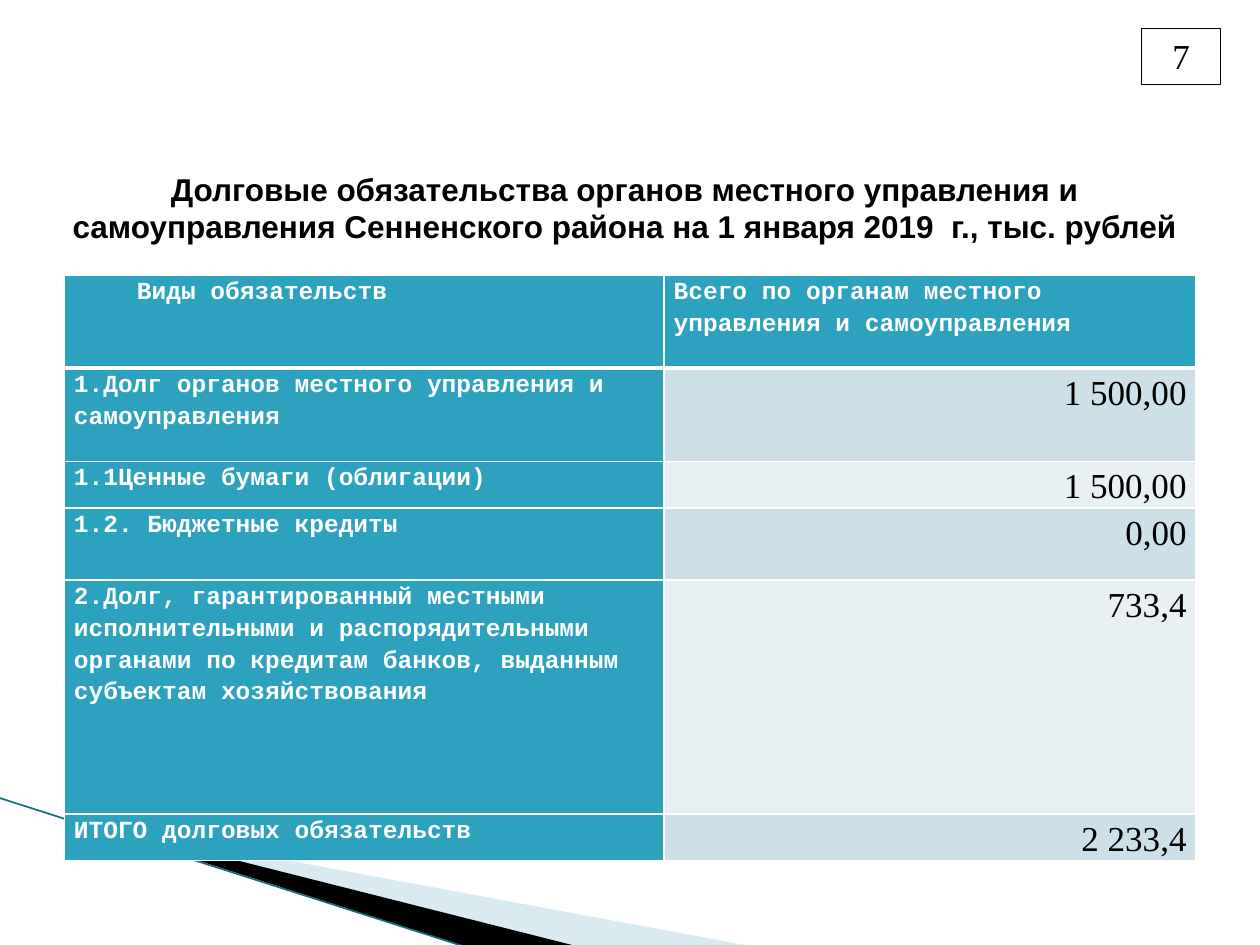
from lxml import etree
from pptx import Presentation
from pptx import util as u
from pptx.dml.color import RGBColor
from pptx.enum import shapes, text
from pptx.oxml import ns

Cm, Pt = u.Cm, u.Pt

COLORS = {
    "white": "FFFFFF",
    "black": "000000",
    "teal": "2DA2BF",
    "band_dark": "CDE0E8",
    "band_light": "E8F0F4",
    "wedge": "A0CBDC",
    "edge": "1C6B7F",
}
COLUMNS = (12.09, 10.72)
# Row height in cm, label, value
ROWS = (
    (1.88, "Виды обязательств",
     "Всего по органам местного управления и самоуправления"),
    (1.88, "1.Долг органов местного управления и самоуправления", "1 500,00"),
    (0.94, "1.1Ценные бумаги (облигации)", "1 500,00"),
    (1.45, "1.2. Бюджетные кредиты", "0,00"),
    (4.72, "2.Долг, гарантированный местными исполнительными и "
           "распорядительными органами по кредитам банков, выданным "
           "субъектам хозяйствования", "733,4"),
    (0.94, "ИТОГО долговых обязательств", "2 233,4"),
)


def rgb(name):
    return RGBColor.from_string(COLORS[name])


def fill_solid(fill, color):
    fill.solid()
    fill.fore_color.rgb = rgb(color)


def add_span(para, wording, font, size, color, bold=False):
    span = para.add_run()
    span.text = wording
    span.font.name = font
    span.font.size = Pt(size)
    span.font.bold = bold
    span.font.color.rgb = rgb(color)


def add_wedge(page, points, color, alpha=None):
    corners = [(Cm(x), Cm(y)) for x, y in points]
    builder = page.shapes.build_freeform(*corners[0])
    builder.add_line_segments(corners[1:], close=True)
    wedge = builder.convert_to_shape()
    wedge.shadow.inherit = False
    wedge.line.fill.background()
    fill_solid(wedge.fill, color)
    if alpha:
        tint = wedge._element.spPr.find(".//" + ns.qn("a:srgbClr"))
        etree.SubElement(tint, ns.qn("a:alpha"), val=str(alpha * 1000))


def add_corner_decoration(page, left, top):
    """Draw the wedges and the thin edge line, measured from their shared tip."""
    def shifted(points):
        return [(left + x, top + y) for x, y in points]

    add_wedge(page, shifted([(0.05, 0.05), (13.77, 2.59), (10.23, 2.59),
                             (0.05, 0.02)]), "wedge", 40)
    add_wedge(page, shifted([(0, 0), (10.26, 2.59), (8.1, 2.62),
                             (0.03, 0.03)]), "black")
    (x1, y1), (x2, y2) = shifted([(-1.38, -0.4), (8.07, 2.62)])
    edge = page.shapes.add_connector(shapes.MSO_CONNECTOR.STRAIGHT,
                                     Cm(x1), Cm(y1), Cm(x2), Cm(y2))
    edge.line.color.rgb = rgb("edge")
    edge.line.width = Pt(0.95)
    etree.SubElement(edge._element.spPr, ns.qn("a:effectLst"))


def set_borders(cell, widths):
    """Give the cell white borders; widths maps the sides L, R, T, B to points."""
    properties = cell._tc.get_or_add_tcPr()
    for side, width in widths.items():
        line = etree.SubElement(properties, ns.qn("a:ln" + side),
                                w=str(Pt(width)))
        solid = etree.SubElement(line, ns.qn("a:solidFill"))
        etree.SubElement(solid, ns.qn("a:srgbClr"), val=COLORS["white"])


def fill_cell(cell, wording, row, column):
    set_borders(cell, {"L": 1, "R": 1, "T": 3 if row == 1 else 1,
                       "B": 3 if row == 0 else 1})
    cell.margin_left = cell.margin_right = Cm(0.19)
    cell.margin_top = cell.margin_bottom = 0
    para = cell.text_frame.paragraphs[0]
    para.line_spacing = 1.15
    if row == 0 or column == 0:
        fill_solid(cell.fill, "teal")
        add_span(para, wording, "Courier New", 14, "white", True)
    else:
        fill_solid(cell.fill, "band_dark" if row % 2 else "band_light")
        para.alignment = text.PP_ALIGN.RIGHT
        add_span(para, wording, "Times New Roman", 20, "black")


def add_debt_table(page, left, top):
    heights = [row[0] for row in ROWS]
    table = page.shapes.add_table(
        len(ROWS), len(COLUMNS), Cm(left), Cm(top),
        Cm(sum(COLUMNS)), Cm(sum(heights))).table
    table.horz_banding = False
    for column, width in zip(table.columns, COLUMNS):
        column.width = Cm(width)
    for i, (height, *wordings) in enumerate(ROWS):
        table.rows[i].height = Cm(height)
        for j, wording in enumerate(wordings):
            fill_cell(table.cell(i, j), wording, i, j)
    heading = table.cell(0, 0).text_frame.paragraphs[0]
    heading._p.get_or_add_pPr().set("indent", str(Cm(1.27)))


def place_title(page, left, top, width, height):
    title = page.shapes.title
    title.left, title.top = Cm(left), Cm(top)
    title.width, title.height = Cm(width), Cm(height)
    frame = title.text_frame
    frame.word_wrap = True
    frame.auto_size = text.MSO_AUTO_SIZE.NONE
    frame.vertical_anchor = text.MSO_ANCHOR.MIDDLE
    para = frame.paragraphs[0]
    para.alignment = text.PP_ALIGN.CENTER
    add_span(para, "Долговые обязательства органов местного управления и "
                   "самоуправления Сенненского района на 1 января 2019  г., "
                   "тыс. рублей", "Arial", 18, "black", True)


def add_page_number(page, left, top, width, height):
    box = page.shapes.add_shape(shapes.MSO_SHAPE.RECTANGLE, Cm(left), Cm(top),
                                Cm(width), Cm(height))
    box.shadow.inherit = False
    box.fill.background()
    box.line.color.rgb = rgb("black")
    box.line.width = Pt(0.75)
    box.text_frame.vertical_anchor = text.MSO_ANCHOR.TOP
    para = box.text_frame.paragraphs[0]
    para.alignment = text.PP_ALIGN.CENTER
    add_span(para, "7", "Times New Roman", 20, "black")


def main():
    deck = Presentation()
    deck.slide_width, deck.slide_height = Cm(25.4), Cm(19.05)
    page = deck.slides.add_slide(deck.slide_layouts.get_by_name("Title Only"))
    fill_solid(page.background.fill, "white")
    add_corner_decoration(page, 1.35, 16.48)
    add_debt_table(page, 1.3, 5.54)
    place_title(page, 1.09, 3.28, 23.01, 1.8)
    add_page_number(page, 23.01, 0.58, 1.6, 1.12)
    deck.save("out.pptx")


if __name__ == "__main__":
    main()
